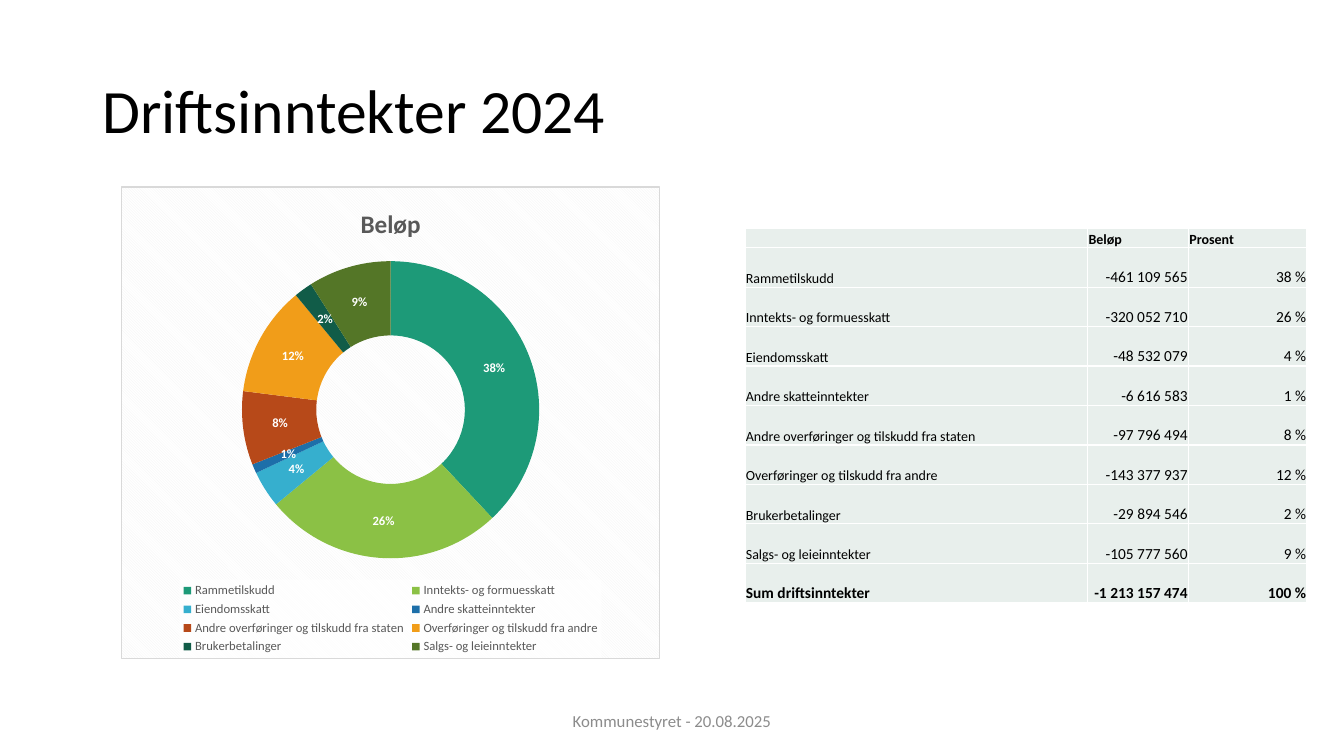
import dataclasses

import lxml.etree
import pptx
import pptx.chart.data
import pptx.dml.color
import pptx.enum.chart
import pptx.enum.text
import pptx.oxml
import pptx.oxml.ns
import pptx.util

SCALE = 7620
ALIGN = pptx.enum.text.PP_ALIGN
ANCHOR = pptx.enum.text.MSO_ANCHOR


@dataclasses.dataclass(frozen=True)
class Theme:
    face: str = "Calibri"
    ink: str = "000000"
    grey: str = "595959"
    pale: str = "8C8C8C"
    white: str = "FFFFFF"
    cell: str = "E8EFEC"
    edge: str = "D9D9D9"
    hatch: str = "F2F2F2"
    head: int = 44
    title: int = 18
    foot: int = 12
    sum: int = 11
    body: int = 10
    small: int = 9


THEME = Theme()

ITEMS = [
    ("Rammetilskudd", "-461 109 565", 38, "1D9A78"),
    ("Inntekts- og formuesskatt", "-320 052 710", 26, "8BC145"),
    ("Eiendomsskatt", "-48 532 079", 4, "36AFCE"),
    ("Andre skatteinntekter", "-6 616 583", 1, "1D6FA9"),
    ("Andre overføringer og tilskudd fra staten", "-97 796 494", 8, "B74919"),
    ("Overføringer og tilskudd fra andre", "-143 377 937", 12, "F19D19"),
    ("Brukerbetalinger", "-29 894 546", 2, "115C48"),
    ("Salgs- og leieinntekter", "-105 777 560", 9, "547627"),
]


def px(count):
    return pptx.util.Emu(count * SCALE)


def rgb(code):
    return pptx.dml.color.RGBColor.from_string(code)


def style(font, size, color=THEME.ink, bold=False):
    font.name = THEME.face
    font.size = pptx.util.Pt(size)
    font.bold = bold
    font.color.rgb = rgb(color)


def write(frame, text, size=THEME.body, color=THEME.ink, bold=False,
          align=ALIGN.LEFT, anchor=ANCHOR.MIDDLE, space=None):
    frame.word_wrap = True
    frame.vertical_anchor = anchor
    para = frame.paragraphs[0]
    para.alignment = align
    para.line_spacing = space
    if text:
        run = para.add_run()
        run.text = text
        style(run.font, size, color, bold)
    else:
        tag = pptx.oxml.ns.qn("a:endParaRPr")
        lxml.etree.SubElement(para._p, tag, sz=str(size * 100))


def place(shape, left, top, width, height):
    shape.left, shape.top = px(left), px(top)
    shape.width, shape.height = px(width), px(height)


def paint(fill, line=""):
    spaces = pptx.oxml.ns.nsdecls("c", "a")
    return pptx.oxml.parse_xml(f"<c:spPr {spaces}>{fill}{line}</c:spPr>")


def solid(color, extra=""):
    return (f'<a:solidFill><a:srgbClr val="{color}">{extra}'
            "</a:srgbClr></a:solidFill>")


def add_ring(slide, left, top, width, height):
    data = pptx.chart.data.CategoryChartData()
    data.categories = [name for name, _, _, _ in ITEMS]
    data.add_series("Beløp", [-share for _, _, share, _ in ITEMS])
    kind = pptx.enum.chart.XL_CHART_TYPE.DOUGHNUT
    chart = slide.shapes.add_chart(
        kind, px(left), px(top), px(width), px(height), data).chart
    style(chart.font, THEME.body)
    chart.has_title = True
    write(chart.chart_title.text_frame, "Beløp", size=THEME.title,
          color=THEME.grey, bold=True, align=ALIGN.CENTER)
    chart.has_legend = True
    legend = chart.legend
    legend.position = pptx.enum.chart.XL_LEGEND_POSITION.BOTTOM
    legend.include_in_layout = False
    style(legend.font, THEME.small, THEME.grey)
    veil = paint(solid(THEME.white, '<a:alpha val="78000"/>'))
    legend._element.find(pptx.oxml.ns.qn("c:txPr")).addprevious(veil)

    plot = chart.plots[0]
    plot.vary_by_categories = True
    hole = plot._element.find(pptx.oxml.ns.qn("c:holeSize"))
    hole.set("val", "70")
    for spot, (_, _, _, color) in enumerate(ITEMS):
        fill = plot.series[0].points[spot].format.fill
        fill.solid()
        fill.fore_color.rgb = rgb(color)
    plot.has_data_labels = True
    labels = plot.data_labels
    labels.show_percentage = True
    labels.show_value = False
    labels.number_format = "0%"
    labels.number_format_is_linked = False
    style(labels.font, THEME.small, THEME.white, True)

    hatch = (f'<a:pattFill prst="dkDnDiag"><a:fgClr><a:srgbClr val="{THEME.hatch}"/>'
             f'</a:fgClr><a:bgClr><a:srgbClr val="{THEME.white}"/></a:bgClr></a:pattFill>')
    edge = f'<a:ln w="9525">{solid(THEME.edge)}</a:ln>'
    chart._chartSpace.find(pptx.oxml.ns.qn("c:chart")).addnext(paint(hatch, edge))


def format_cell(cell):
    cell.margin_left = cell.margin_right = cell.margin_top = px(1)
    cell.margin_bottom = 0
    spaces = pptx.oxml.ns.nsdecls("a")
    for side in "LRTB":
        cell._tc.get_or_add_tcPr().append(pptx.oxml.parse_xml(
            f'<a:ln{side} {spaces} w="12700">{solid(THEME.white)}</a:ln{side}>'))
    cell.fill.solid()
    cell.fill.fore_color.rgb = rgb(THEME.cell)
    cell.vertical_anchor = ANCHOR.BOTTOM


def add_grid(slide, left, top, widths, heights):
    rows = [("", "Beløp", "Prosent")]
    rows += [(name, amount, f"{share} %") for name, amount, share, _ in ITEMS]
    rows.append(("Sum driftsinntekter", "-1 213 157 474", "100 %"))
    grid = slide.shapes.add_table(
        len(rows), len(widths), px(left), px(top),
        px(sum(widths)), px(sum(heights))).table
    grid.first_row = grid.horz_banding = False
    for col, width in zip(grid.columns, widths):
        col.width = px(width)
    last = len(rows) - 1
    for y, row in enumerate(rows):
        grid.rows[y].height = px(heights[y])
        for x, text in enumerate(row):
            cell = grid.cell(y, x)
            number = y > 0 and x > 0
            write(cell.text_frame, text, bold=y in (0, last),
                  size=THEME.sum if number or y == last else THEME.body,
                  align=ALIGN.RIGHT if number else ALIGN.LEFT,
                  anchor=None)
            format_cell(cell)


def main():
    deck = pptx.Presentation()
    deck.slide_width, deck.slide_height = px(1600), px(900)
    slide = deck.slides.add_slide(deck.slide_layouts[5])
    title = slide.shapes.title
    place(title, 110, 48, 1380, 174)
    write(title.text_frame, "Driftsinntekter 2024", size=THEME.head, space=0.9)
    add_ring(slide, 144, 222, 642, 562)
    add_grid(slide, 887, 272, (408, 120, 141), [23] + [47] * 9)
    foot = slide.shapes.add_textbox(px(530), px(834), px(540), px(48))
    write(foot.text_frame, "Kommunestyret - 20.08.2025", size=THEME.foot,
          color=THEME.pale, align=ALIGN.CENTER)
    deck.save("out.pptx")


if __name__ == "__main__":
    main()
